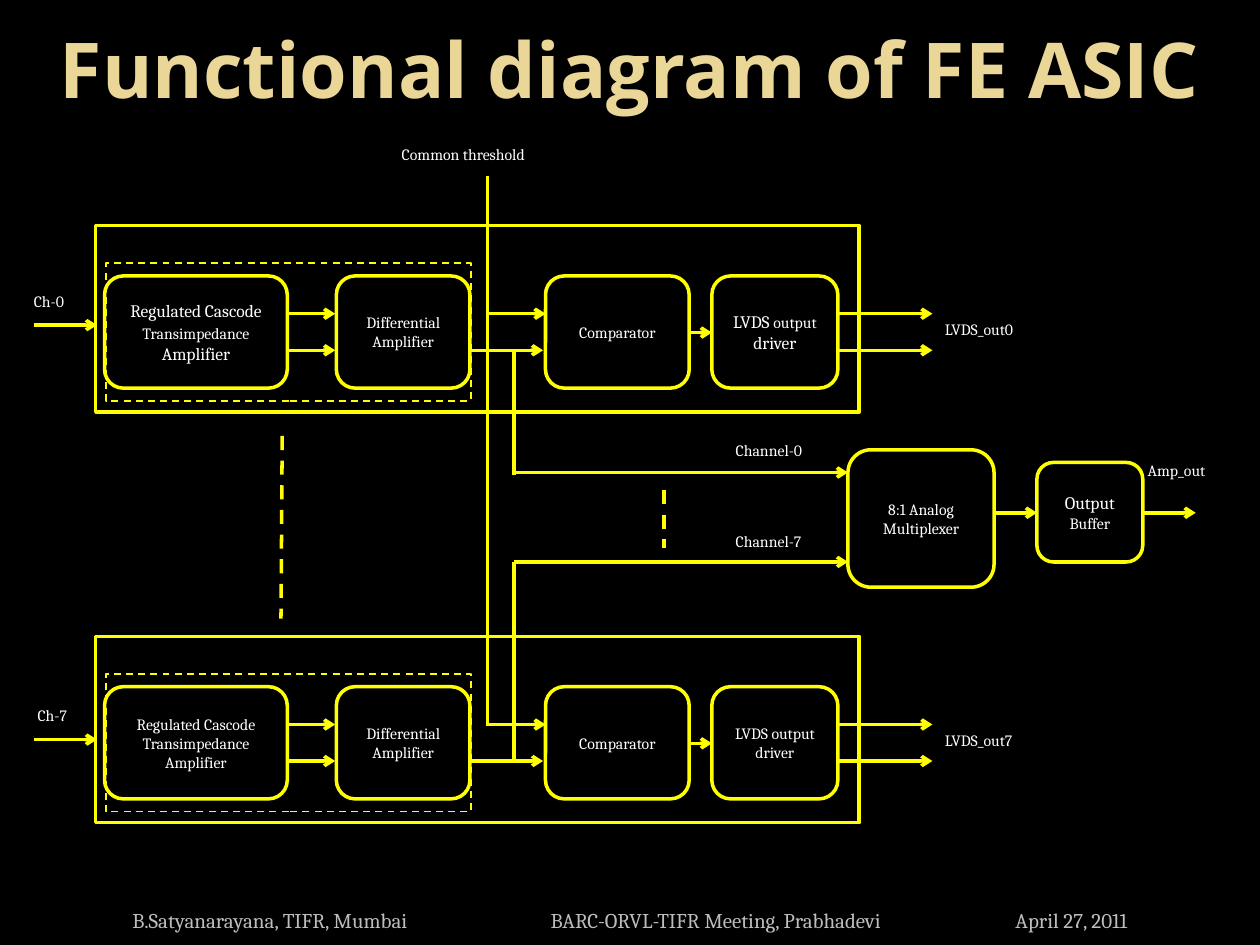
from dataclasses import dataclass

import pptx
import pptx.dml.color
import pptx.enum.dml
import pptx.enum.shapes
import pptx.enum.text
import pptx.oxml.ns
import pptx.util
from lxml import etree

Inches = pptx.util.Inches
Pt = pptx.util.Pt
Align = pptx.enum.text.PP_ALIGN
Anchor = pptx.enum.text.MSO_ANCHOR
ShapeType = pptx.enum.shapes.MSO_SHAPE
qn = pptx.oxml.ns.qn

COLORS = {
    "background": "000000",
    "title": "EAD696",
    "footer": "BDBDBD",
    "label": "FFFFFF",
    "line": "FFFF00",
}


@dataclass
class Box:
    left: float
    top: float
    width: float
    height: float
    runs: tuple = ()  # (text, size) pairs
    rounded: bool = True
    weight: float = 2
    dashed: bool = False


@dataclass
class Wire:
    x1: float
    y1: float
    x2: float
    y2: float
    arrow: bool = True
    dashed: bool = False


@dataclass
class Label:
    left: float
    top: float
    width: float
    text: str


@dataclass
class Channel:
    number: int
    top: float
    input_wire: float
    input_label: Label
    amplifier: tuple
    driver: tuple


def color(name: str) -> pptx.dml.color.RGBColor:
    return pptx.dml.color.RGBColor.from_string(COLORS[name])


def write_text(shape, runs: tuple, *, fill: str = "label", font: str = "Cambria",
               bold: bool = False, align: Align = Align.CENTER,
               anchor: Anchor = Anchor.MIDDLE):
    frame = shape.text_frame
    frame.word_wrap = True
    frame.vertical_anchor = anchor
    paragraph = frame.paragraphs[0]
    paragraph.alignment = align
    for text, size in runs:
        run = paragraph.add_run()
        run.text = text
        run.font.name = font
        run.font.size = Pt(size)
        run.font.bold = bold
        run.font.color.rgb = color(fill)
    return paragraph


def style_line(line, weight: float, dashed: bool) -> None:
    line.color.rgb = color("line")
    line.width = Pt(weight)
    if dashed:
        line.dash_style = pptx.enum.dml.MSO_LINE.DASH


def draw_box(slide, box: Box) -> None:
    kind = ShapeType.ROUNDED_RECTANGLE if box.rounded else ShapeType.RECTANGLE
    shape = slide.shapes.add_shape(kind, Inches(box.left), Inches(box.top),
                                   Inches(box.width), Inches(box.height))
    shape.shadow.inherit = False
    shape.fill.background()
    style_line(shape.line, box.weight, box.dashed)
    if box.runs:
        write_text(shape, box.runs)


def draw_wire(slide, wire: Wire) -> None:
    connector = slide.shapes.add_connector(
        pptx.enum.shapes.MSO_CONNECTOR.STRAIGHT,
        Inches(wire.x1), Inches(wire.y1), Inches(wire.x2), Inches(wire.y2))
    style_line(connector.line, 2, wire.dashed)
    properties = connector._element.spPr
    if wire.arrow:
        etree.SubElement(properties.find(qn("a:ln")), qn("a:tailEnd"), type="arrow")
    etree.SubElement(properties, qn("a:effectLst"))


def draw_label(slide, label: Label) -> None:
    shape = slide.shapes.add_textbox(Inches(label.left), Inches(label.top),
                                     Inches(label.width), Inches(0.27))
    write_text(shape, ((label.text, 9),), align=Align.LEFT, anchor=Anchor.TOP)


def draw_channel(slide, channel: Channel) -> None:
    top = channel.top
    stage_top = top + 0.4
    upper, lower = top + 0.7, top + 0.99
    middle = top + 0.85

    # Channel frame, amplifier group and the four stages
    draw_box(slide, Box(0.76, top, 6.06, 1.48, rounded=False))
    draw_box(slide, Box(0.84, top + 0.3, 2.9, 1.09, rounded=False, weight=1, dashed=True))
    stages = (
        (0.83, 1.45, channel.amplifier),
        (2.67, 1.06, (("Differential Amplifier", 9),)),
        (4.33, 1.14, (("Comparator", 9),)),
        (5.65, 1.0, channel.driver),
    )
    for left, width, runs in stages:
        draw_box(slide, Box(left, stage_top, width, 0.89, runs))

    # Signals between stages, then input and output
    for x1, x2, y in ((2.27, 2.66, upper), (2.27, 2.66, lower),
                      (3.86, 4.33, upper), (3.72, 4.31, lower),
                      (5.46, 5.65, middle),
                      (6.65, 7.4, upper), (6.65, 7.4, lower),
                      (0.27, 0.77, channel.input_wire)):
        draw_wire(slide, Wire(x1, y, x2, y))
    draw_label(slide, channel.input_label)
    draw_label(slide, Label(7.4, upper, 0.96, f"LVDS_out{channel.number}"))


CHANNELS = (
    Channel(0, 1.79, 2.58, Label(0.17, 2.27, 0.54, "Ch-0"),
            (("Regulated Cascode ", 10), ("Transimpedance", 9), (" Amplifier", 10)),
            (("LVDS ", 10), ("output", 9), (" driver", 10))),
    Channel(7, 5.05, 5.87, Label(0.2, 5.55, 0.54, "Ch-7"),
            (("Regulated Cascode Transimpedance Amplifier", 9),),
            (("LVDS output driver", 9),)),
)

OUTPUT_BOXES = (
    Box(6.73, 3.57, 1.16, 1.09, (("8:1 Analog Multiplexer", 9),)),
    Box(8.23, 3.67, 0.84, 0.79, (("Output ", 10), ("Buffer", 9))),
)

SHARED_WIRES = (
    Wire(3.87, 1.4, 3.87, 5.75, arrow=False),  # common threshold
    Wire(4.08, 2.78, 4.08, 3.77, arrow=False),  # channel 0 to multiplexer
    Wire(4.08, 3.75, 6.73, 3.75),
    Wire(4.08, 6.04, 4.08, 4.46, arrow=False),  # channel 7 to multiplexer
    Wire(4.08, 4.46, 6.73, 4.46),
    Wire(7.89, 4.07, 8.23, 4.07),
    Wire(9.08, 4.07, 9.49, 4.07),
    Wire(2.24, 3.46, 2.23, 4.91, arrow=False, dashed=True),  # omitted channels
    Wire(5.27, 3.89, 5.27, 4.35, arrow=False, dashed=True),
)

SHARED_LABELS = (
    Label(3.09, 1.1, 1.5, "Common threshold"),
    Label(5.74, 3.45, 0.91, "Channel-0"),
    Label(5.74, 4.17, 0.91, "Channel-7"),
    Label(9.01, 3.61, 0.82, "Amp_out"),
)


def draw_title(slide) -> None:
    title = slide.shapes.title
    title.left, title.top = Inches(0.08), Inches(0.05)
    title.width, title.height = Inches(9.84), Inches(0.98)
    write_text(title, (("Functional diagram of FE ASIC", 44),),
               fill="title", font="Open Sans", bold=True)


def draw_footer(slide) -> None:
    footer = slide.shapes.add_textbox(Inches(0.08), Inches(7.1), Inches(9.84), Inches(0.35))
    footer.text_frame.margin_left = Inches(0.97)
    parts = ("B.Satyanarayana, TIFR, Mumbai", "BARC-ORVL-TIFR Meeting, Prabhadevi",
             "April 27, 2011")
    paragraph = write_text(footer, (("\t".join(parts), 12),), fill="footer",
                           align=Align.LEFT, anchor=Anchor.BOTTOM)
    tabs = etree.SubElement(paragraph._p.get_or_add_pPr(), qn("a:tabLst"))
    for position in (3.32, 7.01):
        etree.SubElement(tabs, qn("a:tab"), pos=str(Inches(position)), algn="l")


def main() -> None:
    presentation = pptx.Presentation()
    presentation.slide_width, presentation.slide_height = Inches(10), Inches(7.5)
    slide = presentation.slides.add_slide(presentation.slide_layouts[5])
    slide.background.fill.solid()
    slide.background.fill.fore_color.rgb = color("background")

    draw_title(slide)
    draw_footer(slide)
    for wire in SHARED_WIRES:
        draw_wire(slide, wire)
    for box in OUTPUT_BOXES:
        draw_box(slide, box)
    for channel in CHANNELS:
        draw_channel(slide, channel)
    for label in SHARED_LABELS:
        draw_label(slide, label)
    presentation.save("out.pptx")


if __name__ == "__main__":
    main()
